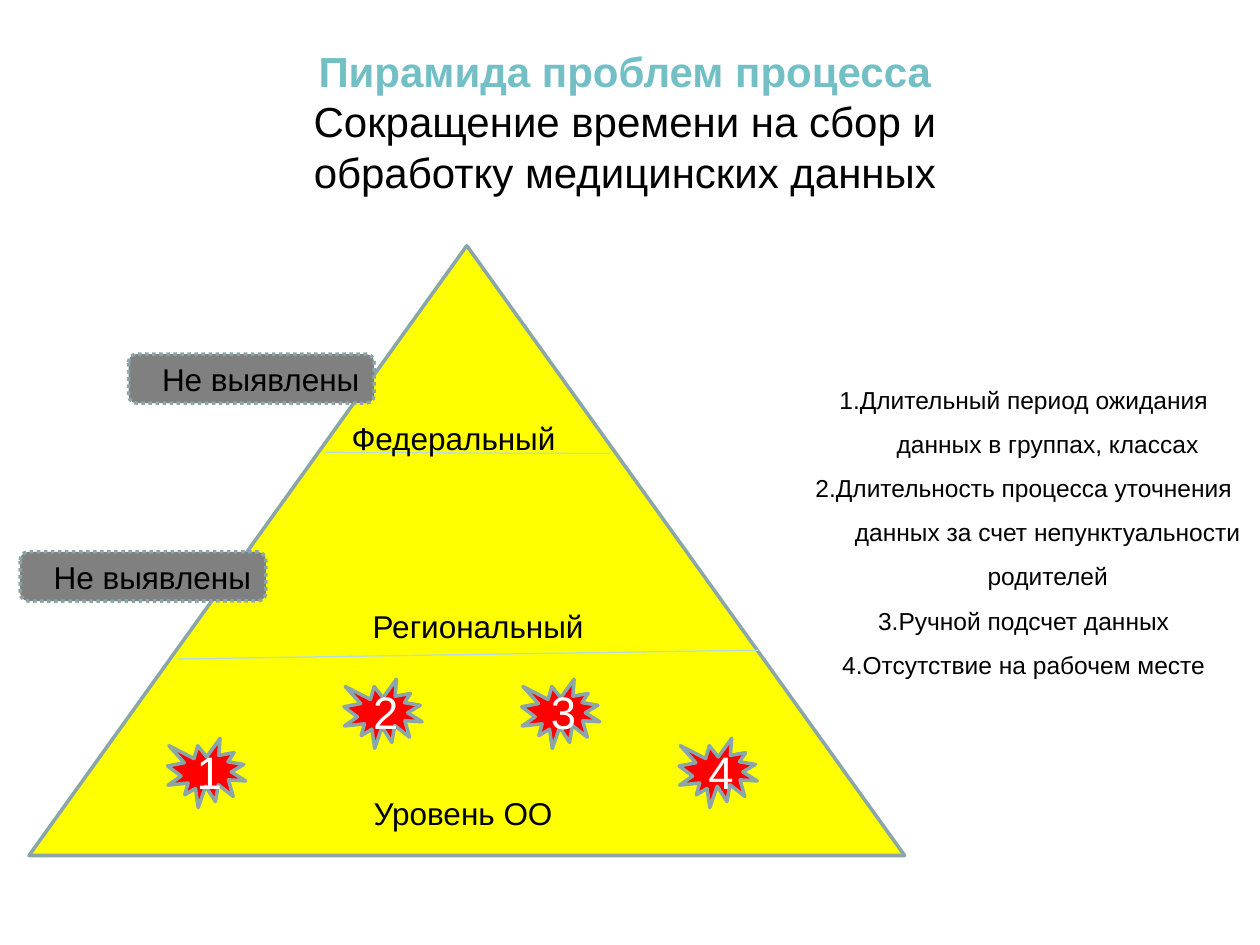
from lxml import etree
from pptx import Presentation
from pptx.dml.color import RGBColor
from pptx.enum.dml import MSO_LINE
from pptx.enum.shapes import MSO_CONNECTOR, MSO_SHAPE
from pptx.enum.text import MSO_ANCHOR, PP_ALIGN
from pptx.oxml.ns import qn
from pptx.util import Inches, Pt

CENTER, RIGHT = PP_ALIGN.CENTER, PP_ALIGN.RIGHT
TOP, MIDDLE = MSO_ANCHOR.TOP, MSO_ANCHOR.MIDDLE
STRAIGHT = MSO_CONNECTOR.STRAIGHT
TRIANGLE = MSO_SHAPE.ISOSCELES_TRIANGLE
BURST = MSO_SHAPE.EXPLOSION1
ROUND = MSO_SHAPE.ROUNDED_RECTANGLE
DOTTED = MSO_LINE.ROUND_DOT

BLACK = RGBColor(0x00, 0x00, 0x00)
WHITE = RGBColor(0xFF, 0xFF, 0xFF)
YELLOW = RGBColor(0xFF, 0xFF, 0x00)
RED = RGBColor(0xFF, 0x00, 0x00)
GRAY = RGBColor(0x80, 0x80, 0x80)
TEAL = RGBColor(0x72, 0xBF, 0xC5)
EDGE = RGBColor(0x8A, 0xA6, 0xA8)
PALE = RGBColor(0xB6, 0xDC, 0xDF)

TITLE = ["Пирамида проблем процесса",
         "Сокращение времени на сбор и",
         "обработку медицинских данных"]
ISSUES = ["1.Длительный период ожидания данных в группах, классах",
          "2.Длительность процесса уточнения данных за счет "
          "непунктуальности родителей",
          "3.Ручной подсчет данных",
          "4.Отсутствие на рабочем месте"]
# name, left, top, width
LEVELS = [("Федеральный", 2.66, 3.28, 1.88),
          ("Региональный", 2.27, 4.77, 3.05),
          ("Уровень ОО", 2.27, 6.25, 2.81)]
# start x, start y, end x, end y
BORDERS = [(2.58, 3.59, 4.84, 3.6), (1.41, 5.23, 6.02, 5.16)]
# number, left, top
BURSTS = [("1", 1.33, 5.86), ("2", 2.73, 5.39),
          ("4", 5.39, 5.86), ("3", 4.14, 5.39)]
# left, top
TAGS = [(1.02, 2.81), (0.16, 4.38)]
TAG_TEXT = "Не выявлены"


def write(shape, lines, size=18, color=BLACK, align=CENTER, anchor=TOP,
          hang=0, spacing=None):
    frame = shape.text_frame
    frame.word_wrap = True
    frame.vertical_anchor = anchor
    for i, line in enumerate(lines):
        para = frame.add_paragraph() if i else frame.paragraphs[0]
        para.alignment = align
        if spacing:
            para.line_spacing = spacing
        if hang:
            props = para._p.get_or_add_pPr()
            props.set("marL", str(Inches(hang)))
            props.set("indent", str(-Inches(hang)))
        run = para.add_run()
        run.text = line
        run.font.name = "Arial"
        run.font.size = Pt(size)
        run.font.color.rgb = color
    return frame


def add_box(slide, *place):
    return slide.shapes.add_textbox(*map(Inches, place))


def add_form(slide, kind, place, fill, dash=None):
    form = slide.shapes.add_shape(kind, *map(Inches, place))
    form.shadow.inherit = False
    form.fill.solid()
    form.fill.fore_color.rgb = fill
    form.line.color.rgb = EDGE
    form.line.width = Pt(2)
    if dash:
        form.line.dash_style = dash
    return form


def add_border(slide, ends):
    line = slide.shapes.add_connector(STRAIGHT, *map(Inches, ends))
    line.line.color.rgb = PALE
    line.line.width = Pt(0.75)
    etree.SubElement(line._element.spPr, qn("a:effectLst"))


def main():
    deck = Presentation()
    deck.slide_width, deck.slide_height = Inches(10), Inches(7.5)
    slide = deck.slides.add_slide(deck.slide_layouts[6])

    add_form(slide, TRIANGLE, (0.23, 1.95, 6.95, 4.84), YELLOW)
    for ends in BORDERS:
        add_border(slide, ends)
    for name, left, top, width in LEVELS:
        write(add_box(slide, left, top, width, 0.38), [name])
    for number, left, top in BURSTS:
        burst = add_form(slide, BURST, (left, top, 0.62, 0.55), RED)
        write(burst, [number], size=26, color=WHITE, anchor=MIDDLE, hang=0.3)

    title = write(add_box(slide, 0.31, 0.31, 9.3, 1.31), TITLE, size=24)
    head = title.paragraphs[0].runs[0].font
    head.bold = True
    head.color.rgb = TEAL

    for left, top in TAGS:
        tag = add_form(slide, ROUND, (left, top, 1.95, 0.39), GRAY, DOTTED)
        write(tag, [TAG_TEXT], align=RIGHT, anchor=MIDDLE)
    write(add_box(slide, 6.25, 2.89, 3.75, 2.85), ISSUES, size=14,
          hang=0.38, spacing=1.5)
    deck.save("out.pptx")


if __name__ == "__main__":
    main()
